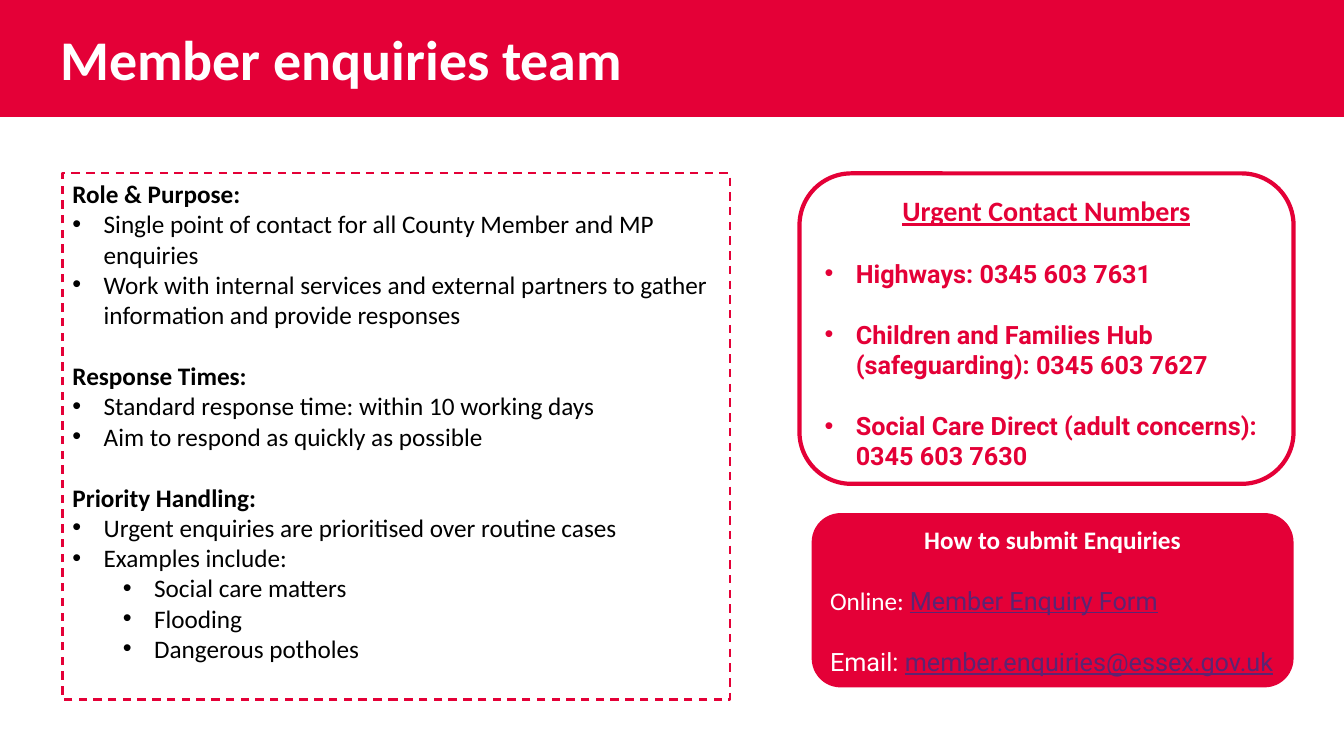
from pptx import Presentation
from pptx import util as u
from pptx.dml.color import RGBColor
from pptx.enum import dml, shapes, text
from pptx.oxml.ns import qn
from lxml import etree

RED, WHITE, BLACK, PURPLE = "E40037", "FFFFFF", "000000", "5C2472"
GAP = 22  # points, one line of 18 pt text
HANG = 0.31

ROLES = [
    ("Role & Purpose:", [
        (0, "Single point of contact for all County Member and MP enquiries"),
        (0, "Work with internal services and external partners to gather "
            "information and provide responses"),
    ]),
    ("Response Times:", [
        (0, "Standard response time: within 10 working days"),
        (0, "Aim to respond as quickly as possible"),
    ]),
    ("Priority Handling:", [
        (0, "Urgent enquiries are prioritised over routine cases"),
        (0, "Examples include:"),
        (1, "Social care matters"),
        (1, "Flooding"),
        (1, "Dangerous potholes"),
    ]),
]
PHONES = [
    "Highways: 0345 603 7631",
    "Children and Families Hub (safeguarding): 0345 603 7627",
    "Social Care Direct (adult concerns): 0345 603 7630",
]


def rgb(code):
    return RGBColor.from_string(code)


def add_box(slide, box, kind, fill, line=None, width=1, anchor=text.MSO_ANCHOR.TOP):
    shape = slide.shapes.add_shape(kind, *map(u.Inches, box))
    shape.shadow.inherit = False
    shape.fill.solid()
    shape.fill.fore_color.rgb = rgb(fill)
    if line:
        shape.line.color.rgb = rgb(line)
        shape.line.width = u.Pt(width)
    else:
        shape.line.fill.background()
    shape.text_frame.word_wrap = True
    shape.text_frame.vertical_anchor = anchor
    return shape


def add_para(frame, align=text.PP_ALIGN.LEFT, gap=0):
    """Use the empty first paragraph, or append one with a gap above it."""
    para = frame.paragraphs[0]
    if para.runs:
        para = frame.add_paragraph()
        para.space_before = u.Pt(gap)
    para.alignment = align
    return para


def add_run(para, words, color, size=18, face="Calibri", bold=False, line=False):
    run = para.add_run()
    run.text = words
    font = run.font
    font.name, font.size, font.bold, font.underline = face, u.Pt(size), bold, line
    font.color.rgb = rgb(color)


def indent(para, left, first=0):
    props = para._p.get_or_add_pPr()
    props.set("marL", str(u.Inches(left)))
    props.set("indent", str(u.Inches(first)))
    return props


def add_bullet(para, level=0):
    para.level = level
    props = indent(para, HANG + level / 2, -HANG)
    etree.SubElement(props, qn("a:buFont")).set("typeface", "Arial")
    etree.SubElement(props, qn("a:buChar")).set("char", "•")


def draw_title(slide, box):
    bar = add_box(slide, box, shapes.MSO_SHAPE.RECTANGLE, RED,
                  anchor=text.MSO_ANCHOR.MIDDLE)
    para = add_para(bar.text_frame)
    indent(para, 0.5)
    add_run(para, "Member enquiries team", WHITE, 40, bold=True)


def draw_roles(slide, box):
    panel = add_box(slide, box, shapes.MSO_SHAPE.RECTANGLE, WHITE, RED, 1.5)
    panel.line.dash_style = dml.MSO_LINE.DASH
    frame = panel.text_frame
    for head, items in ROLES:
        add_run(add_para(frame, gap=GAP), head, BLACK, bold=True)
        for level, words in items:
            para = add_para(frame)
            add_bullet(para, level)
            add_run(para, words, BLACK)


def draw_phones(slide, box):
    panel = add_box(slide, box, shapes.MSO_SHAPE.ROUNDED_RECTANGLE, WHITE, RED, 3)
    frame = panel.text_frame
    add_run(add_para(frame, text.PP_ALIGN.CENTER), "Urgent Contact Numbers",
            RED, 20, bold=True, line=True)
    for words in PHONES:
        para = add_para(frame, gap=GAP)
        add_bullet(para)
        add_run(para, words, RED, face="Roboto", bold=True)


def draw_submit(slide, box):
    panel = add_box(slide, box, shapes.MSO_SHAPE.ROUNDED_RECTANGLE, RED,
                    anchor=text.MSO_ANCHOR.MIDDLE)
    frame = panel.text_frame
    add_run(add_para(frame, text.PP_ALIGN.CENTER), "How to submit Enquiries",
            WHITE, bold=True)
    for label, face, target in [
        ("Online: ", "Calibri", "Member Enquiry Form"),
        ("Email: ", "Roboto", "member.enquiries@essex.gov.uk"),
    ]:
        para = add_para(frame, gap=GAP)
        add_run(para, label, WHITE, face=face)
        add_run(para, target, PURPLE, face="Roboto", line=True)


def main():
    deck = Presentation()
    deck.slide_width, deck.slide_height = u.Inches(13.33), u.Inches(7.5)
    slide = deck.slides.add_slide(deck.slide_layouts[6])
    draw_title(slide, (0, 0, 13.33, 1.16))
    draw_submit(slide, (8.05, 5.09, 4.78, 1.73))
    draw_phones(slide, (7.93, 1.72, 4.9, 3.08))
    draw_roles(slide, (0.62, 1.72, 6.62, 5.22))
    deck.save("out.pptx")


if __name__ == "__main__":
    main()
